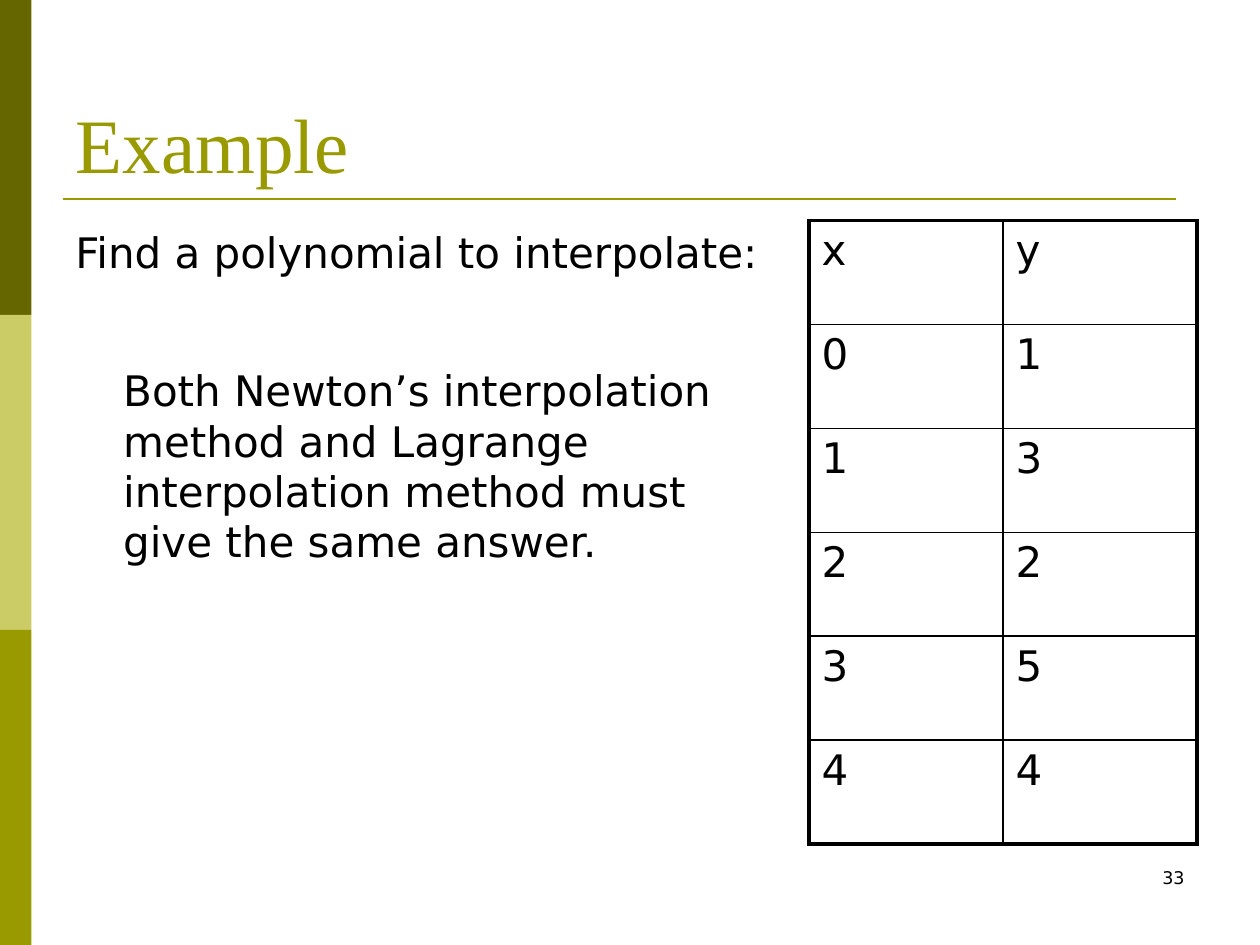
from lxml.etree import SubElement
from pptx import Presentation
from pptx.dml.color import RGBColor
from pptx.enum.shapes import MSO_CONNECTOR, MSO_SHAPE
from pptx.enum.text import MSO_ANCHOR, PP_ALIGN
from pptx.oxml.ns import qn
from pptx.util import Inches, Pt

COLORS = {
    "dark_olive": "666600",
    "light_olive": "CCCC66",
    "olive": "999900",
    "black": "000000",
}
SANS = "DejaVu Sans"
SERIF = "Times New Roman"

TITLE = "Example"
BODY = [
    {"text": "Find a polynomial to interpolate:"},
    {
        "text": "Both Newton’s interpolation method and Lagrange interpolation "
                "method must give the same answer.",
        "indent": 0.38,
        "space_before": 50,
    },
]
POINTS = [("x", "y"), ("0", "1"), ("1", "3"), ("2", "2"), ("3", "5"), ("4", "4")]
PAGE_NUMBER = "33"
SIDE_BANDS = ["dark_olive", "light_olive", "olive"]
BAND_WIDTH, BAND_HEIGHT = 0.25, 2.5
TABLE_BOX = (6.42, 1.75, 3.08, 4.95)
OUTER_BORDER, INNER_BORDER = 2.25, 1


def color(name):
    return RGBColor.from_string(COLORS[name])


def inches(values):
    return [Inches(value) for value in values]


def write(paragraph, text, size=24, font=SANS, fill="black",
          align=PP_ALIGN.LEFT, indent=0, space_before=0):
    paragraph.alignment = align
    paragraph.space_before = Pt(space_before)
    if indent:
        paragraph._p.get_or_add_pPr().set("marL", str(Inches(indent)))
    run = paragraph.add_run()
    run.text = text
    run.font.size = Pt(size)
    run.font.name = font
    run.font.color.rgb = color(fill)


def add_text_box(slide, box, items):
    frame = slide.shapes.add_textbox(*inches(box)).text_frame
    frame.word_wrap = True
    for index, item in enumerate(items):
        paragraph = frame.add_paragraph() if index else frame.paragraphs[0]
        write(paragraph, **item)


def set_borders(cell, widths):
    properties = cell._tc.get_or_add_tcPr()
    for side, width in widths.items():
        line = SubElement(properties, qn(f"a:ln{side}"), w=str(Pt(width)))
        fill = SubElement(line, qn("a:solidFill"))
        SubElement(fill, qn("a:srgbClr"), val=COLORS["black"])


def add_points_table(slide):
    row_count, column_count = len(POINTS), len(POINTS[0])
    table = slide.shapes.add_table(row_count, column_count, *inches(TABLE_BOX)).table
    table.first_row = False
    table.horz_banding = False
    for row, values in enumerate(POINTS):
        for column, value in enumerate(values):
            cell = table.cell(row, column)
            write(cell.text_frame.paragraphs[0], value)
            edges = {
                "L": column == 0,
                "R": column == column_count - 1,
                "T": row == 0,
                "B": row == row_count - 1,
            }
            set_borders(cell, {side: OUTER_BORDER if outer else INNER_BORDER
                               for side, outer in edges.items()})
            cell.fill.background()


def add_decoration(slide):
    for index, name in enumerate(SIDE_BANDS):
        box = (0, index * BAND_HEIGHT, BAND_WIDTH, BAND_HEIGHT)
        band = slide.shapes.add_shape(MSO_SHAPE.RECTANGLE, *inches(box))
        band.shadow.inherit = False
        band.fill.solid()
        band.fill.fore_color.rgb = color(name)
        band.line.fill.background()
    rule = slide.shapes.add_connector(
        MSO_CONNECTOR.STRAIGHT, *inches((0.5, 1.58, 9.33, 1.58)))
    rule.line.color.rgb = color("olive")
    rule.line.width = Pt(1.5)
    SubElement(rule._element.spPr, qn("a:effectLst"))


def add_title(slide):
    title = slide.shapes.title
    title.left, title.top, title.width, title.height = inches((0.5, 0.3, 9, 1.25))
    title.text_frame.vertical_anchor = MSO_ANCHOR.BOTTOM
    write(title.text_frame.paragraphs[0], TITLE, size=44, font=SERIF, fill="olive")


def main():
    presentation = Presentation()
    presentation.slide_width = Inches(10)
    presentation.slide_height = Inches(7.5)
    slide = presentation.slides.add_slide(presentation.slide_layouts[5])
    add_decoration(slide)
    add_title(slide)
    add_text_box(slide, (0.5, 1.75, 5.83, 4.95), BODY)
    add_points_table(slide)
    add_text_box(slide, (7.17, 6.83, 2.33, 0.5),
                 [{"text": PAGE_NUMBER, "size": 10, "align": PP_ALIGN.RIGHT}])
    presentation.save("out.pptx")


if __name__ == "__main__":
    main()
